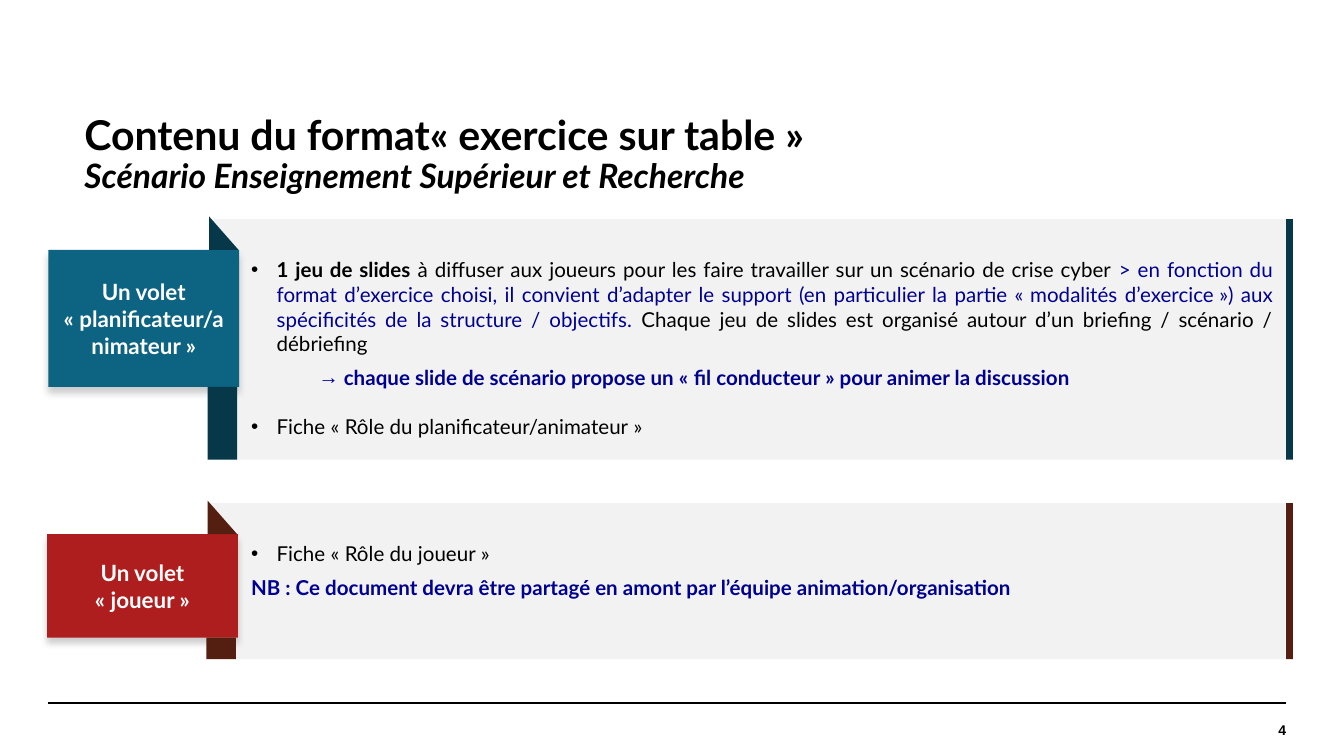
from dataclasses import dataclass

from lxml import etree
from pptx import Presentation
from pptx import util as u
from pptx.dml.color import RGBColor
from pptx.enum import shapes, text
from pptx.oxml.ns import qn

CELL = 0.1  # inches; the slide is a grid of square cells
COLS, ROWS = 100, 56.25
BLACK, WHITE, GREY, BLUE = "000000", "FFFFFF", "F2F2F2", "000091"
NBSP = chr(160)
RECT = shapes.MSO_SHAPE.RECTANGLE
TRIANGLE = shapes.MSO_SHAPE.RIGHT_TRIANGLE
ALIGN = text.PP_ALIGN


@dataclass
class Run:
    words: str
    color: str = BLACK
    bold: bool = False
    size: float = 11
    italic: bool = False
    font: str = "Lato"
    line_end: bool = False


@dataclass
class Para:
    runs: list[Run]
    bullet: str = ""
    margin: float = 0
    align: ALIGN = ALIGN.LEFT
    before: float = 0
    after: float = 0
    spacing: float = 1


@dataclass
class Panel:
    left: float
    top: float
    height: float
    tag_height: float
    tag_inset: float
    color: str
    dark: str
    label: list[str]
    body: list[Para]


def quoted(words: str) -> str:
    """Put words in French quotation marks that stay on the same line."""
    return f"«{NBSP}{words}{NBSP}»"


def cells(n: float) -> int:
    return u.Inches(round(n * CELL, 4))


def rgb(color: str) -> RGBColor:
    return RGBColor.from_string(color)


def write(tf, paras: list[Para], anchor=text.MSO_ANCHOR.TOP, inset: float = 1) -> None:
    tf.word_wrap = True
    tf.vertical_anchor = anchor
    tf.margin_left = tf.margin_right = cells(inset)
    for i, para in enumerate(paras):
        p = tf.add_paragraph() if i else tf.paragraphs[0]
        p.alignment = para.align
        p.line_spacing = para.spacing
        p.space_before, p.space_after = u.Pt(para.before), u.Pt(para.after)
        if para.bullet:
            pPr = p._p.get_or_add_pPr()
            pPr.set("marL", str(cells(para.margin)))
            pPr.set("indent", str(-cells(1.9)))
            etree.SubElement(pPr, qn("a:buFont")).set("typeface", "Arial")
            etree.SubElement(pPr, qn("a:buChar")).set("char", para.bullet)
        for run in para.runs:
            r = p.add_run()
            r.text = run.words
            r.font.name, r.font.size = run.font, u.Pt(run.size)
            r.font.bold, r.font.italic = run.bold, run.italic
            r.font.color.rgb = rgb(run.color)
            if run.line_end:
                p.add_line_break()


def add_text(s, x: float, y: float, w: float, h: float, paras: list[Para], **layout) -> None:
    sp = s.shapes.add_textbox(cells(x), cells(y), cells(w), cells(h))
    write(sp.text_frame, paras, **layout)


def add_block(s, kind, x: float, y: float, w: float, h: float, color: str):
    sp = s.shapes.add_shape(kind, cells(x), cells(y), cells(w), cells(h))
    sp.shadow.inherit = False
    sp.fill.solid()
    sp.fill.fore_color.rgb = rgb(color)
    sp.line.fill.background()
    return sp


def drop_shadow(sp) -> None:
    effects = sp._element.spPr.find(qn("a:effectLst"))
    shadow = etree.SubElement(effects, qn("a:outerShdw"), blurRad=str(u.Pt(4)),
                              dist=str(u.Pt(3)), dir="5400000", rotWithShape="0")
    color = etree.SubElement(shadow, qn("a:srgbClr"), val=BLACK)
    etree.SubElement(color, qn("a:alpha"), val="20000")


def add_panel(s, panel: Panel) -> None:
    """Grey panel with a folded ribbon, a label on its left and a stripe on its right."""
    left, top, bottom = panel.left, panel.top, panel.top + panel.height
    tag_top = top + 2.3
    tag_bottom = tag_top + panel.tag_height
    add_block(s, RECT, left, top, 80.2, panel.height, GREY)
    tag = add_block(s, RECT, left - 11.95, tag_top, 14.2, panel.tag_height, panel.color)
    drop_shadow(tag)
    label = [Para([Run(line, WHITE, True, 12)], align=ALIGN.CENTER) for line in panel.label]
    write(tag.text_frame, label, text.MSO_ANCHOR.MIDDLE, panel.tag_inset)
    add_block(s, TRIANGLE, left, top - 0.2, 2.2, 2.5, panel.dark)
    add_block(s, RECT, 95.7, top, 0.5, panel.height, panel.dark)
    add_block(s, RECT, left - 0.1, tag_bottom, 2.2, bottom - tag_bottom, panel.dark)
    add_text(s, 17.7, tag_top + 0.05, 78, panel.height - 3.2, panel.body)


PANELS = [
    Panel(15.55, 16.3, 17.9, 10.2, 1, "0C6382", "073849",
          ["Un volet " + quoted("planificateur/animateur")], [
        Para([
            Run("1 jeu de slides", bold=True),
            Run(" à diffuser aux joueurs pour les faire travailler sur un scénario de crise cyber "),
            Run("> en fonction du format d’exercice choisi, il convient d’adapter le support "
                f"(en particulier la partie {quoted('modalités d’exercice')}) aux spécificités "
                "de la structure / objectifs.", BLUE),
            Run(" Chaque jeu de slides est organisé autour d’un briefing / scénario / débriefing"),
        ], "•", 1.9, ALIGN.JUSTIFY, after=5),
        Para([Run(f"chaque slide de scénario propose un {quoted('fil conducteur')} "
                  "pour animer la discussion", BLUE, True)], "→", 6.9),
        Para([Run("Fiche " + quoted("Rôle du planificateur/animateur"))], "•", 1.9, before=13),
    ]),
    Panel(15.45, 37.45, 11.6, 7.7, 0, "AE1E1E", "541F10", ["Un volet", quoted("joueur")], [
        Para([Run("Fiche " + quoted("Rôle du joueur"))], "•", 1.9, ALIGN.JUSTIFY, after=5),
        Para([Run("NB : Ce document devra être partagé en amont par l’équipe animation/organisation",
                  BLUE, True)]),
    ]),
]


def main() -> None:
    prs = Presentation()
    prs.slide_width, prs.slide_height = cells(COLS), cells(ROWS)
    s = prs.slides.add_slide(prs.slide_layouts[6])

    rule = s.shapes.add_connector(shapes.MSO_CONNECTOR.STRAIGHT,
                                  cells(3.55), cells(52.3), cells(95.7), cells(52.3))
    rule.line.color.rgb = rgb(BLACK)
    rule.line.width = u.Pt(0.8)
    etree.SubElement(rule._element.spPr, qn("a:effectLst"))

    middle = text.MSO_ANCHOR.MIDDLE
    add_text(s, 5.3, 8.6, 92, 5.9, [Para([
        Run("Contenu du format« exercice sur table »", bold=True, size=22, line_end=True),
        Run("Scénario Enseignement Supérieur et Recherche", bold=True, size=18, italic=True),
    ], spacing=0.9)], anchor=middle)
    add_text(s, 80.9, 52.35, 14.8, 3.9, [
        Para([Run("4", bold=True, size=7.5, font="Arial")], align=ALIGN.RIGHT),
    ], anchor=middle, inset=0)
    for panel in PANELS:
        add_panel(s, panel)
    prs.save("out.pptx")


if __name__ == "__main__":
    main()
